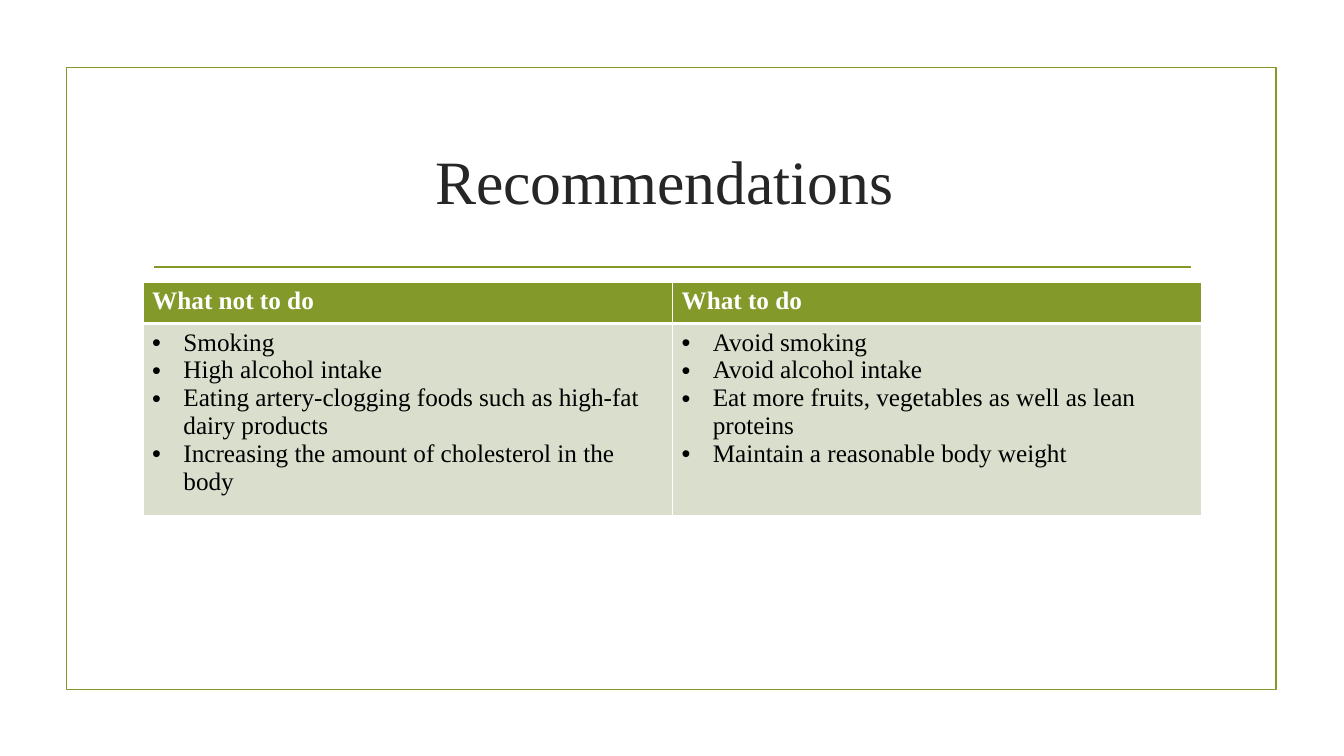
from lxml.etree import SubElement
from pptx import Presentation
from pptx.dml.color import RGBColor
from pptx.enum.shapes import MSO_CONNECTOR as CONNECTOR, MSO_SHAPE as SHAPE
from pptx.enum.text import MSO_ANCHOR as ANCHOR, PP_ALIGN as ALIGN
from pptx.oxml.ns import qn
from pptx.util import Inches, Pt

OLIVE = RGBColor(0x83, 0x99, 0x2A)
SAGE = RGBColor(0xD9, 0xDE, 0xCD)
CHARCOAL = RGBColor(0x26, 0x26, 0x26)
WHITE = RGBColor(0xFF, 0xFF, 0xFF)
BLACK = RGBColor(0, 0, 0)

FONT = "Times New Roman"
TITLE_FORMAT = {"name": FONT, "size": Pt(44), "bold": False}
HEADING_FORMAT = {"name": FONT, "size": Pt(18), "bold": True}
ADVICE_FORMAT = {"name": FONT, "size": Pt(18), "bold": False}
HEADING_BORDERS = {"lnL": 1, "lnR": 1, "lnT": 1, "lnB": 3}
ADVICE_BORDERS = {"lnL": 1, "lnR": 1, "lnT": 3, "lnB": 1}
ROW_HEIGHTS = (0.41, 1.75)
BULLET_INDENT = Inches(0.31)

ADVICE = {
    "What not to do": [
        "Smoking",
        "High alcohol intake",
        "Eating artery-clogging foods such as high-fat dairy products",
        "Increasing the amount of cholesterol in the body",
    ],
    "What to do": [
        "Avoid smoking",
        "Avoid alcohol intake",
        "Eat more fruits, vegetables as well as lean proteins",
        "Maintain a reasonable body weight",
    ],
}


def write(paragraph, wording, formats, color):
    """Add one formatted run to a paragraph."""
    run = paragraph.add_run()
    run.text = wording
    for attribute, value in formats.items():
        setattr(run.font, attribute, value)
    run.font.color.rgb = color


def add_frame(slide, left, top, width, height):
    """Outline the slide area with a thin olive border."""
    frame = slide.shapes.add_shape(
        SHAPE.RECTANGLE, Inches(left), Inches(top), Inches(width), Inches(height))
    frame.shadow.inherit = False
    frame.fill.background()
    frame.line.color.rgb = OLIVE
    frame.line.width = Pt(1.25)


def add_title(slide, left, top, width, height, wording):
    """Place the centred title and the rule beneath it."""
    title = slide.shapes.add_textbox(
        Inches(left), Inches(top), Inches(width), Inches(height)).text_frame
    title.word_wrap = True
    title.vertical_anchor = ANCHOR.MIDDLE
    title.paragraphs[0].alignment = ALIGN.CENTER
    write(title.paragraphs[0], wording, TITLE_FORMAT, CHARCOAL)

    inset, rule_top = 0.11, Inches(top + height + 0.15)
    rule = slide.shapes.add_connector(
        CONNECTOR.STRAIGHT, Inches(left + inset), rule_top,
        Inches(left + width - inset), rule_top)
    rule.line.color.rgb = OLIVE
    rule.line.width = Pt(1.25)
    SubElement(rule._element.spPr, qn("a:effectLst"))


def style_cell(cell, fill_color, borders):
    """Give a cell its white borders, fill and margins."""
    properties = cell._tc.get_or_add_tcPr()
    for side, points in borders.items():
        border = SubElement(properties, qn(f"a:{side}"), w=str(Pt(points)))
        solid = SubElement(border, qn("a:solidFill"))
        SubElement(solid, qn("a:srgbClr"), val=str(WHITE))
    cell.fill.solid()
    cell.fill.fore_color.rgb = fill_color
    cell.margin_left = cell.margin_right = Inches(0.09)
    cell.margin_top = cell.margin_bottom = Inches(0.05)


def add_bullet(paragraph):
    """Turn a paragraph into a hanging bullet item."""
    properties = paragraph._p.get_or_add_pPr()
    properties.set("marL", str(BULLET_INDENT))
    properties.set("indent", str(-BULLET_INDENT))
    SubElement(properties, qn("a:buFont"), typeface="Arial")
    SubElement(properties, qn("a:buChar"), char="•")


def add_advice_table(slide, left, top, width, advice):
    """Build a table with one column of bullets per heading."""
    table = slide.shapes.add_table(
        len(ROW_HEIGHTS), len(advice), Inches(left), Inches(top),
        Inches(width), Inches(sum(ROW_HEIGHTS))).table
    for row, height in zip(table.rows, ROW_HEIGHTS):
        row.height = Inches(height)
    for column, (heading, items) in enumerate(advice.items()):
        heading_cell, advice_cell = table.cell(0, column), table.cell(1, column)
        style_cell(heading_cell, OLIVE, HEADING_BORDERS)
        write(heading_cell.text_frame.paragraphs[0], heading, HEADING_FORMAT, WHITE)
        style_cell(advice_cell, SAGE, ADVICE_BORDERS)
        body = advice_cell.text_frame
        for index, item in enumerate(items):
            paragraph = body.add_paragraph() if index else body.paragraphs[0]
            add_bullet(paragraph)
            write(paragraph, item, ADVICE_FORMAT, BLACK)


def main():
    """Build and save the recommendations slide."""
    deck = Presentation()
    deck.slide_width, deck.slide_height = Inches(13.33), Inches(7.5)
    slide = deck.slides.add_slide(deck.slide_layouts[6])
    add_frame(slide, 0.66, 0.67, 12, 6.17)
    add_title(slide, 1.42, 1.07, 10.5, 1.43, "Recommendations ")
    add_advice_table(slide, 1.42, 2.8, 10.5, ADVICE)
    deck.save("out.pptx")


if __name__ == "__main__":
    main()
